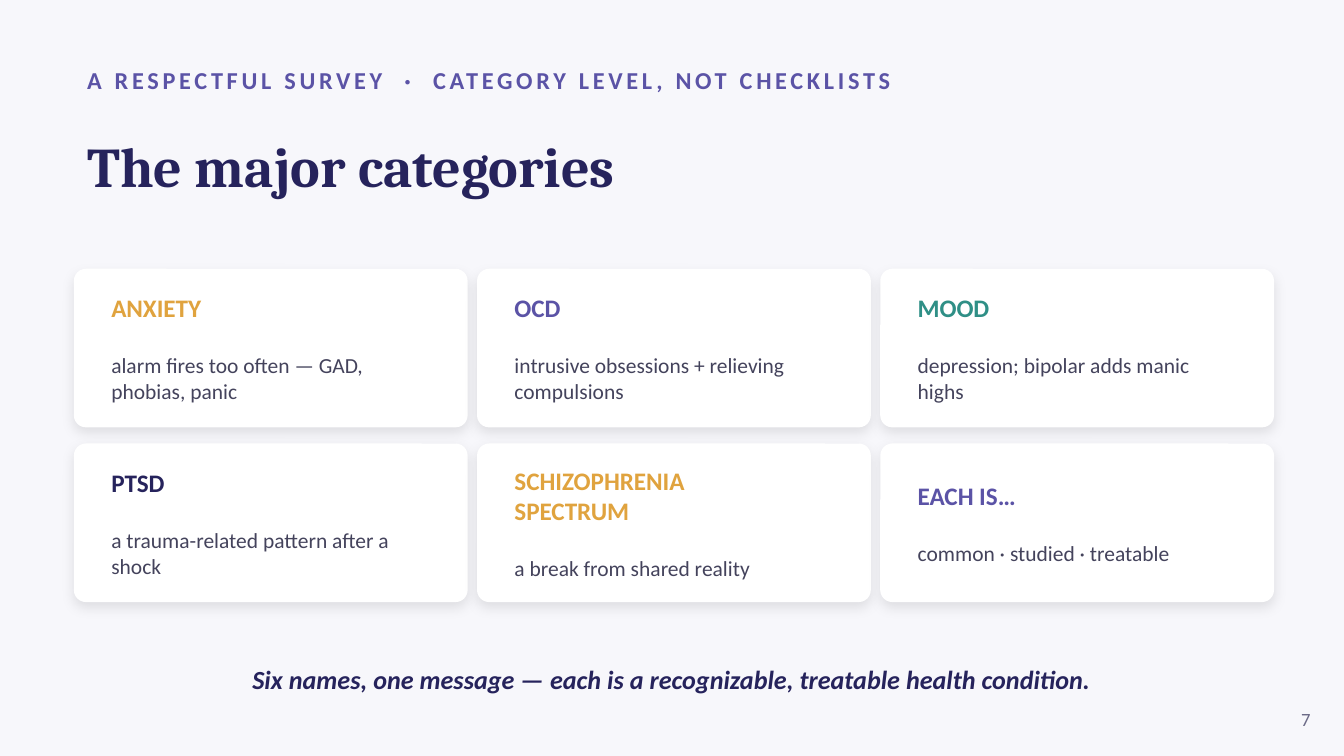
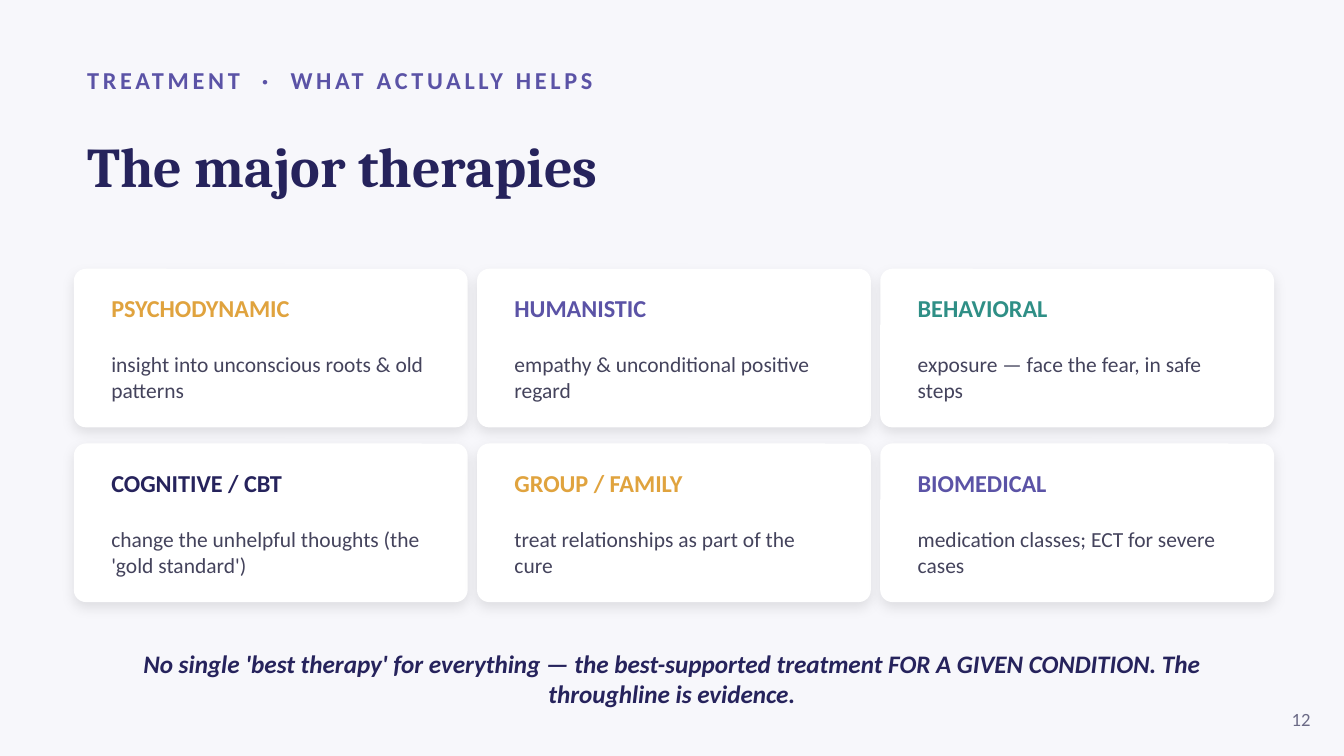
from itertools import cycle

from lxml.etree import SubElement as Sub
from pptx import Presentation
from pptx.dml.color import RGBColor as Rgb
from pptx.enum.shapes import MSO_SHAPE as Shape
from pptx.enum.text import MSO_ANCHOR as Anchor, MSO_AUTO_SIZE as Auto, PP_ALIGN as Align
from pptx.oxml.ns import qn
from pptx.util import Pt

HUES = {
    "page": "F7F7FB", "card": "FFFFFF", "shade": "000000",
    "amber": "E0A33E", "violet": "5B53A6", "teal": "2F8F86",
    "navy": "26235C", "body": "44435C", "muted": "6B6A86",
}
ACCENTS = ("amber", "violet", "teal", "navy")
SANS, SERIF = "Calibri", "Cambria"

LEFT, WIDTH = 39.6, 640.8
GRID = (LEFT, 144)
CARD = (210.96, 84.96)
STEP = (216, 93.6)
COLS = 3
PAD = (12.96, 7.2)

SLIDES = [
    {
        "kicker": "A RESPECTFUL SURVEY  ·  CATEGORY LEVEL, NOT CHECKLISTS",
        "title": "The major categories",
        "head": 13.5,
        "cards": [
            ("ANXIETY", "alarm fires too often — GAD, phobias, panic"),
            ("OCD", "intrusive obsessions + relieving compulsions"),
            ("MOOD", "depression; bipolar adds manic highs"),
            ("PTSD", "a trauma-related pattern after a shock"),
            ("SCHIZOPHRENIA\vSPECTRUM", "a break from shared reality"),
            ("EACH IS…", "common · studied · treatable"),
        ],
        "close": "Six names, one message — each is a recognizable, treatable health condition.",
        "size": 14,
        "page": "7",
    },
    {
        "kicker": "TREATMENT  ·  WHAT ACTUALLY HELPS",
        "title": "The major therapies",
        "head": 13,
        "cards": [
            ("PSYCHODYNAMIC", "insight into unconscious roots & old patterns"),
            ("HUMANISTIC", "empathy & unconditional positive regard"),
            ("BEHAVIORAL", "exposure — face the fear, in safe steps"),
            ("COGNITIVE / CBT", "change the unhelpful thoughts (the 'gold standard')"),
            ("GROUP / FAMILY", "treat relationships as part of the cure"),
            ("BIOMEDICAL", "medication classes; ECT for severe cases"),
        ],
        "close": "No single 'best therapy' for everything — the best-supported treatment "
                 "FOR A GIVEN CONDITION. The throughline is evidence.",
        "size": 13.5,
        "page": "12",
    },
]


def color(name):
    return Rgb.from_string(HUES[name])


def write(para, text, size, hue, face=SANS, bold=False, italic=False, align=Align.LEFT):
    para.text = text
    para.alignment = align
    font = para.font
    font.name, font.size = face, Pt(size)
    font.bold, font.italic = bold, italic
    font.color.rgb = color(hue)


def frame(shape):
    """Give a shape's text wrapping, fixed size and a middle anchor."""
    text = shape.text_frame
    text.word_wrap = True
    text.auto_size = Auto.NONE
    text.vertical_anchor = Anchor.MIDDLE
    return text


def add_text(slide, box):
    return frame(slide.shapes.add_textbox(*map(Pt, box)))


def add_shadow(shape):
    shape.shadow.inherit = False
    effects = shape._element.spPr.find(qn("a:effectLst"))
    outer = Sub(effects, qn("a:outerShdw"), blurRad=str(Pt(7)), dist=str(Pt(3)),
                dir=str(90 * 60000), algn="bl", rotWithShape="0")
    tint = Sub(outer, qn("a:srgbClr"), val=HUES["shade"])
    Sub(tint, qn("a:alpha"), val="10000")


def add_header(slide, kicker, title):
    para = add_text(slide, (LEFT, 30.24, 648, 25.2)).paragraphs[0]
    write(para, kicker, 13, "violet", bold=True)
    para._p.get_or_add_pPr().get_or_add_defRPr().set("spc", "200")

    head = slide.shapes.title
    head.left, head.top, head.width, head.height = map(Pt, (LEFT, 56.16, WIDTH, 64.8))
    write(frame(head).paragraphs[0], title, 30, "navy", SERIF, bold=True)


def add_card(slide, box, name, note, hue, size):
    x, y, w, h = box
    card = slide.shapes.add_shape(Shape.ROUNDED_RECTANGLE, *map(Pt, box))
    card.adjustments[0] = 0.076
    card.fill.solid()
    card.fill.fore_color.rgb = color("card")
    card.line.fill.background()
    add_shadow(card)

    dx, dy = PAD
    text = add_text(slide, (x + dx, y + dy, w - 2 * dx, h - 2 * dy))
    head = text.paragraphs[0]
    write(head, name, size, hue, bold=True)
    head.space_after = Pt(round(size * 1.17, 1))
    write(text.add_paragraph(), note, 11.5, "body")


def add_grid(slide, cards, size):
    for i, ((name, note), hue) in enumerate(zip(cards, cycle(ACCENTS))):
        row, col = divmod(i, COLS)
        box = (GRID[0] + col * STEP[0], GRID[1] + row * STEP[1], *CARD)
        add_card(slide, box, name, note, hue, size)


def add_footer(slide, close, size, page):
    para = add_text(slide, (LEFT, 349.2, WIDTH, 28.8)).paragraphs[0]
    write(para, close, size, "navy", bold=True, italic=True, align=Align.CENTER)
    para = add_text(slide, (673.2, 374.4, 36, 21.6)).paragraphs[0]
    write(para, page, 10, "muted", align=Align.RIGHT)


def add_slide(deck, data):
    slide = deck.slides.add_slide(deck.slide_layouts.get_by_name("Title Only"))
    add_header(slide, data["kicker"], data["title"])
    add_grid(slide, data["cards"], data["head"])
    add_footer(slide, data["close"], data["size"], data["page"])


def main():
    deck = Presentation()
    deck.slide_width, deck.slide_height = Pt(720), Pt(405)
    fill = deck.slide_master.background.fill
    fill.solid()
    fill.fore_color.rgb = color("page")
    for data in SLIDES:
        add_slide(deck, data)
    deck.save("out.pptx")


if __name__ == "__main__":
    main()
